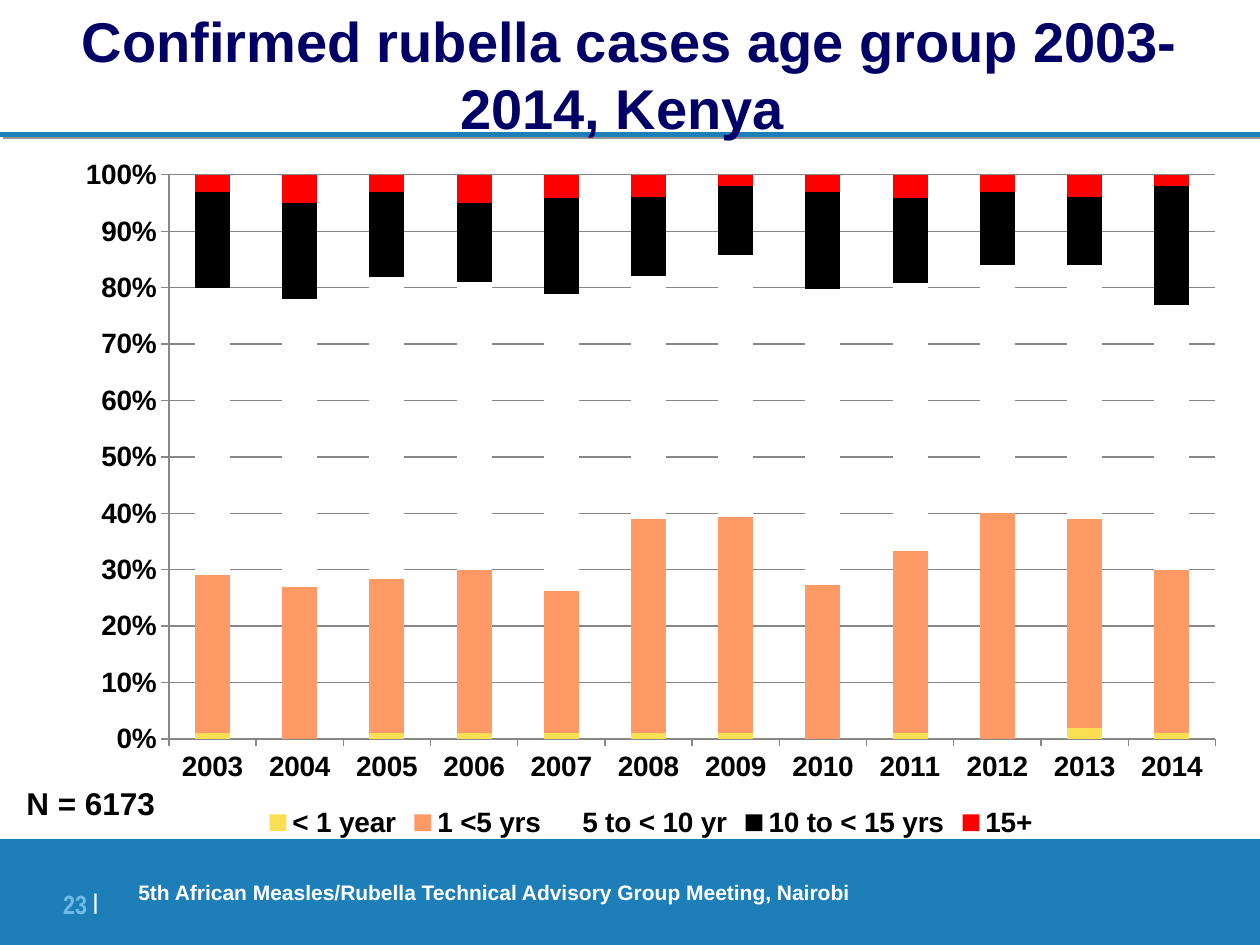
from lxml import etree
from pptx import Presentation
from pptx import util as u
from pptx.chart.data import CategoryChartData
from pptx.dml.color import RGBColor
from pptx.enum import chart as ch
from pptx.enum import shapes, text
from pptx.oxml import parse_xml
from pptx.oxml.ns import nsdecls, qn

Pt = u.Pt
BLUE, GRID = "1E7FB8", "878787"

YEARS = [str(year) for year in range(2003, 2015)]
AGE_GROUPS = [
    ("< 1 year", "FBDF53", [1, 0, 1, 1, 1, 1, 1, 0, 1, 0, 2, 1]),
    ("1 <5 yrs", "FF9966", [28, 27, 27, 29, 25, 38, 38, 27, 32, 40, 37, 29]),
    ("5 to < 10 yr", "FFFFFF", [51, 51, 53, 51, 52, 43, 46, 52, 47, 44, 45, 47]),
    ("10 to < 15 yrs", "000000", [17, 17, 15, 14, 17, 14, 12, 17, 15, 13, 12, 21]),
    ("15+", "FF0000", [3, 5, 3, 5, 4, 4, 2, 3, 4, 3, 4, 2]),
]


def rgb(value):
    return RGBColor.from_string(value)


def points(box):
    return [Pt(v) for v in box]


def set_font(font, size, color, name="Arial", bold=True):
    font.size, font.name, font.bold = Pt(size), name, bold
    font.color.rgb = rgb(color)


def add_run(p, words, size, color, **style):
    r = p.add_run()
    r.text = words
    set_font(r.font, size, color, **style)
    return r


def set_margins(tf, x, y):
    tf.margin_left = tf.margin_right = Pt(x)
    tf.margin_top = tf.margin_bottom = Pt(y)


def shadow(color, distance, degrees):
    return parse_xml(
        f'<a:effectLst {nsdecls("a")}><a:outerShdw dist="{int(Pt(distance))}" '
        f'dir="{degrees * 60000}" algn="ctr" rotWithShape="0">'
        f'<a:srgbClr val="{color}"/></a:outerShdw></a:effectLst>')


def add_rule(s, x, y, width):
    rule = s.shapes.add_connector(
        shapes.MSO_CONNECTOR.STRAIGHT, *points((x, y, x + width, y)))
    rule.line.color.rgb = rgb(BLUE)
    rule.line.width = Pt(3)
    rule.element.spPr.append(shadow("969696", 2.2, 27))


def add_footer(s, box):
    x, y, _, _ = box
    band = s.shapes.add_shape(shapes.MSO_SHAPE.RECTANGLE, *points(box))
    band.shadow.inherit = False
    band.fill.solid()
    band.fill.fore_color.rgb = rgb(BLUE)
    band.line.fill.background()
    tf = band.text_frame
    tf.word_wrap = False
    tf.vertical_anchor = text.MSO_ANCHOR.MIDDLE
    p = tf.paragraphs[0]
    p.alignment = text.PP_ALIGN.LEFT
    p._p.get_or_add_pPr().set("marL", str(int(Pt(72))))
    add_run(p, "5th African Measles/Rubella Technical Advisory Group Meeting, Nairobi",
            12, "FFFFFF")

    # Page number and raised divider
    number = s.shapes.add_textbox(*points((x + 28, y + 22.3, 28, 26)))
    tf = number.text_frame
    tf.word_wrap = True
    set_margins(tf, 0, 0)
    p = tf.paragraphs[0]
    p.alignment = text.PP_ALIGN.RIGHT
    add_run(p, "23 ", 15, "72BBE8", name="Arial Narrow")
    divider = add_run(p, "|", 21, "FFFFFF", name="Arial Narrow")
    divider.font._element.set("baseline", "14000")


def add_title(s, box):
    title = s.shapes.title
    title.left, title.top, title.width, title.height = points(box)
    s.shapes.element.append(title.element)  # in front of the rule
    tf = title.text_frame
    tf.word_wrap = True
    tf.auto_size = text.MSO_AUTO_SIZE.NONE
    tf.vertical_anchor = text.MSO_ANCHOR.MIDDLE
    set_margins(tf, 7.2, 3.6)
    p = tf.paragraphs[0]
    p.alignment = text.PP_ALIGN.CENTER
    r = add_run(p, "Confirmed rubella cases age group 2003-2014, Kenya ", 32, "000066")
    fill = r.font._element.find(qn("a:solidFill"))
    fill.addnext(shadow("99CCFF", 2, 45))


def set_plot_layout(chart, **fractions):
    plot_area = chart._chartSpace.chart.plotArea
    for old in plot_area.findall(qn("c:layout")):
        plot_area.remove(old)
    layout = etree.Element(qn("c:layout"))
    manual = etree.SubElement(layout, qn("c:manualLayout"))
    values = {"layoutTarget": "inner", "xMode": "edge", "yMode": "edge", **fractions}
    for tag, value in values.items():
        etree.SubElement(manual, qn(f"c:{tag}")).set("val", str(value))
    plot_area.insert(0, layout)


def add_age_chart(s, box):
    data = CategoryChartData()
    data.categories = YEARS
    for name, _, values in AGE_GROUPS:
        data.add_series(name, values)
    chart = s.shapes.add_chart(
        ch.XL_CHART_TYPE.COLUMN_STACKED_100, *points(box), data).chart
    set_font(chart.font, 16, "000000")
    chart.has_title = False
    set_plot_layout(chart, x=0.09, y=0.04, w=0.89, h=0.81)

    # Columns
    plot = chart.plots[0]
    plot.gap_width, plot.overlap = 150, 100
    plot.vary_by_categories = False
    for series, (_, color, _) in zip(plot.series, AGE_GROUPS):
        series.format.fill.solid()
        series.format.fill.fore_color.rgb = rgb(color)

    # Axes
    values = chart.value_axis
    values.minimum_scale, values.maximum_scale, values.major_unit = 0, 1, 0.1
    values.has_major_gridlines = True
    values.tick_labels.number_format = "0%"
    values.tick_labels.number_format_is_linked = False
    for axis in (chart.category_axis, values):
        axis.major_tick_mark = ch.XL_TICK_MARK.OUTSIDE
        axis.minor_tick_mark = ch.XL_TICK_MARK.NONE
    for part in (chart.category_axis, values, values.major_gridlines):
        part.format.line.color.rgb = rgb(GRID)
        part.format.line.width = Pt(0.75)

    # Legend
    chart.has_legend = True
    chart.legend.position = ch.XL_LEGEND_POSITION.BOTTOM
    chart.legend.include_in_layout = False
    set_font(chart.legend.font, 16, "000000")


def add_sample_size(s, box):
    tf = s.shapes.add_textbox(*points(box)).text_frame
    tf.word_wrap = True
    tf.auto_size = text.MSO_AUTO_SIZE.SHAPE_TO_FIT_TEXT
    add_run(tf.paragraphs[0], "N = 6173", 18, "000000")


def main():
    prs = Presentation()
    prs.slide_width, prs.slide_height = Pt(720), Pt(540)
    s = prs.slides.add_slide(prs.slide_layouts[5])
    add_rule(s, 0, 77, 720)
    add_footer(s, (0, 479.5, 720, 60.5))
    add_title(s, (0, 0, 720, 84))
    add_age_chart(s, (36, 84, 672, 398))
    add_sample_size(s, (8, 444.5, 88, 29))
    prs.save("out.pptx")


if __name__ == "__main__":
    main()
